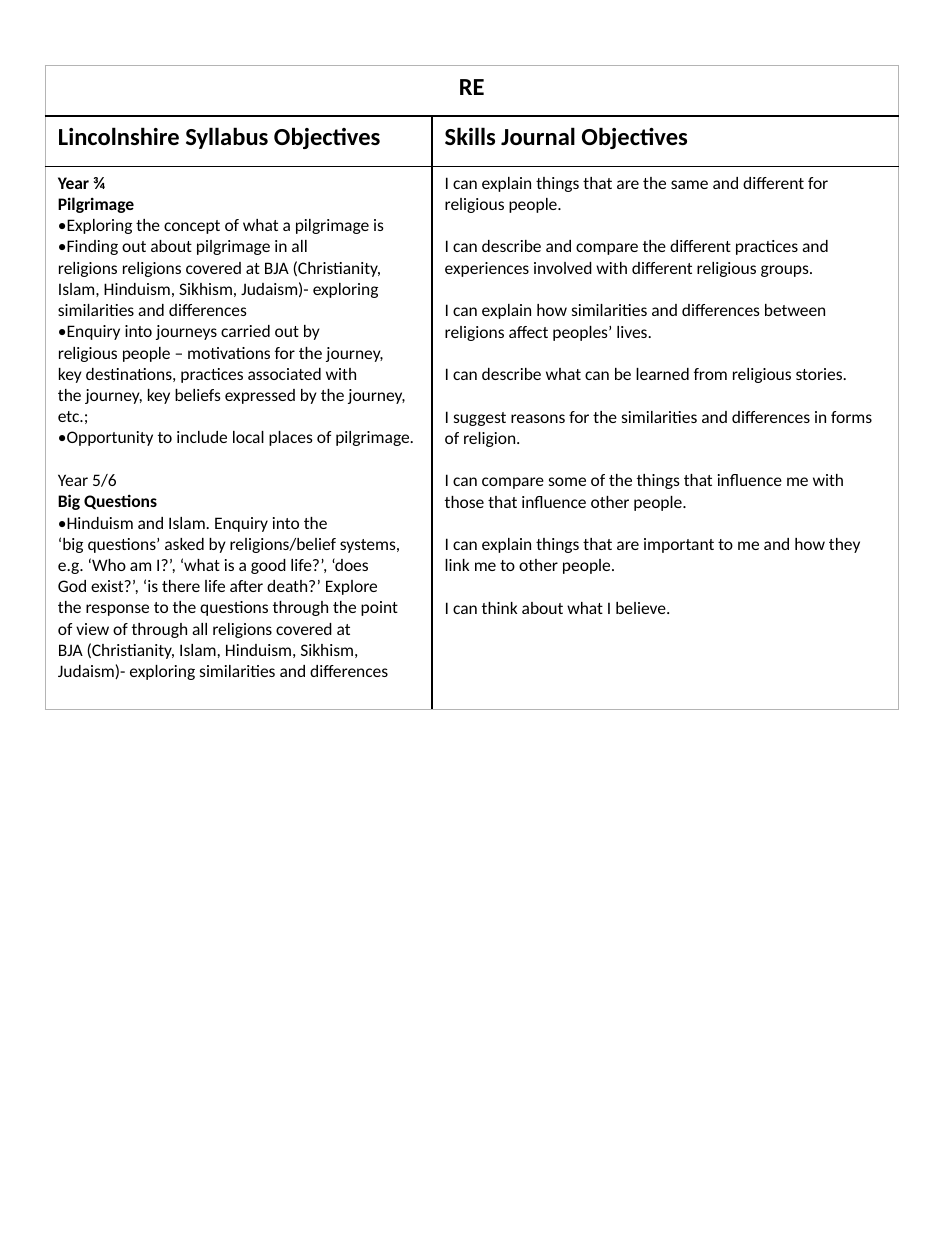
"""Build a one-page table of religious education objectives."""
from lxml import etree
from pptx import Presentation
from pptx.dml.color import RGBColor
from pptx.enum import text
from pptx.oxml import ns
from pptx.util import Inches, Pt

COLOURS = {"ink": "000000", "paper": "FFFFFF", "frame": "B4B4B4"}
FONT = "Calibri"
BODY_SIZE = 10
LINE_GAP = 12.2
COLUMNS = [3.07, 3.7]
ROWS = [0.4, 0.4, 4.31]
HARD_SPACE_MARK, HARD_SPACE = "~", chr(160)

SYLLABUS = [
    ("Year ¾~", {"bold": True}),
    ("Pilgrimage~", {"bold": True}),
    ("•Exploring the concept of what a pilgrimage is~", {}),
    ("•Finding out about pilgrimage in all religions~religions~covered at BJA "
     "(Christianity, Islam,~Hinduism, Sikhism, Judaism)- exploring "
     "similarities~and differences~", {}),
    ("•Enquiry into journeys carried out by religious~people – motivations for "
     "the journey, key~destinations, practices associated with the~journey, "
     "key beliefs expressed by the journey, etc.;", {}),
    ("•Opportunity to include local places of pilgrimage.", {"after": LINE_GAP}),
    ("Year 5/6~", {}),
    ("Big Questions~", {"bold": True}),
    ("•Hinduism and Islam. Enquiry into the ‘big~questions’ asked by "
     "religions/belief systems, e.g.~‘Who am I?’, ‘what is a good life?’, "
     "‘does God~exist?’, ‘is there life after death?’ Explore the~response to "
     "the questions through the point of~view of through all religions covered "
     "at BJA~(Christianity, Islam, Hinduism, Sikhism, Judaism)-~exploring "
     "similarities and differences~", {}),
]
SKILLS = [
    "I can explain things that are the same and different for religious people.",
    "I can describe and compare the different practices and experiences "
    "involved with different religious groups.",
    "I can explain how similarities and differences between religions affect "
    "peoples’ lives.",
    "I can describe what can be learned from religious stories.",
    "I suggest reasons for the similarities and differences in forms of religion.",
    "I can compare some of the things that influence me with those that "
    "influence other people.",
    "I can explain things that are important to me and how they link me to "
    "other people.",
    "I can think about what I believe.",
]


def write_para(para, words, size=BODY_SIZE, bold=False, after=0, align=None):
    """Write one formatted paragraph, turning marks into hard spaces."""
    para.alignment = align
    para.space_after = Pt(after)
    span = para.add_run()
    span.text = words.replace(HARD_SPACE_MARK, HARD_SPACE)
    span.font.name = FONT
    span.font.size = Pt(size)
    span.font.bold = bold
    span.font.color.rgb = RGBColor.from_string(COLOURS["ink"])


def fill_cell(cell, entries):
    """Write a list of (words, format) entries into a cell."""
    frame = cell.text_frame
    for index, (words, options) in enumerate(entries):
        para = frame.add_paragraph() if index else frame.paragraphs[0]
        write_para(para, words, **options)


def add_border(cell, side, colour, width):
    """Add a solid line to one side of a cell."""
    line = etree.SubElement(cell._tc.get_or_add_tcPr(), ns.qn(f"a:ln{side}"),
                            w=str(Pt(width)))
    fill = etree.SubElement(line, ns.qn("a:solidFill"))
    etree.SubElement(fill, ns.qn("a:srgbClr"), val=COLOURS[colour])


def style_cell(cell, outer_sides):
    """Give a cell its borders, then its plain fill."""
    for side in "LRTB":
        add_border(cell, side, "frame" if side in outer_sides else "ink", 1)
    cell.fill.solid()
    cell.fill.fore_color.rgb = RGBColor.from_string(COLOURS["paper"])


def add_grid(page):
    """Add the table with its sizes, borders and merged heading."""
    grid = page.shapes.add_table(
        len(ROWS), len(COLUMNS), Inches(0.36), Inches(0.52),
        Inches(sum(COLUMNS)), Inches(sum(ROWS))).table
    grid.first_row = grid.horz_banding = False
    for column, width in zip(grid.columns, COLUMNS):
        column.width = Inches(width)
    for row, height in zip(grid.rows, ROWS):
        row.height = Inches(height)
    grid.cell(0, 0).merge(grid.cell(0, 1))
    for r in range(len(ROWS)):
        for c in range(len(COLUMNS)):
            outer = {"L" if c == 0 else "R"}
            if r == 0:
                outer |= {"T", "L", "R"}
            if r == len(ROWS) - 1:
                outer.add("B")
            style_cell(grid.cell(r, c), outer)
    return grid


def main():
    """Build and save the deck."""
    deck = Presentation()
    deck.slide_width, deck.slide_height = Inches(7.5), Inches(10)
    page = deck.slides.add_slide(deck.slide_layouts[6])
    grid = add_grid(page)
    heading = {"size": 14, "bold": True}
    fill_cell(grid.cell(0, 0),
              [("RE", {**heading, "align": text.PP_ALIGN.CENTER})])
    fill_cell(grid.cell(1, 0), [("Lincolnshire Syllabus Objectives", heading)])
    fill_cell(grid.cell(1, 1), [("Skills Journal Objectives", heading)])
    fill_cell(grid.cell(2, 0), SYLLABUS)
    fill_cell(grid.cell(2, 1), [(goal, {"after": LINE_GAP}) for goal in SKILLS])
    deck.save("out.pptx")


if __name__ == "__main__":
    main()
